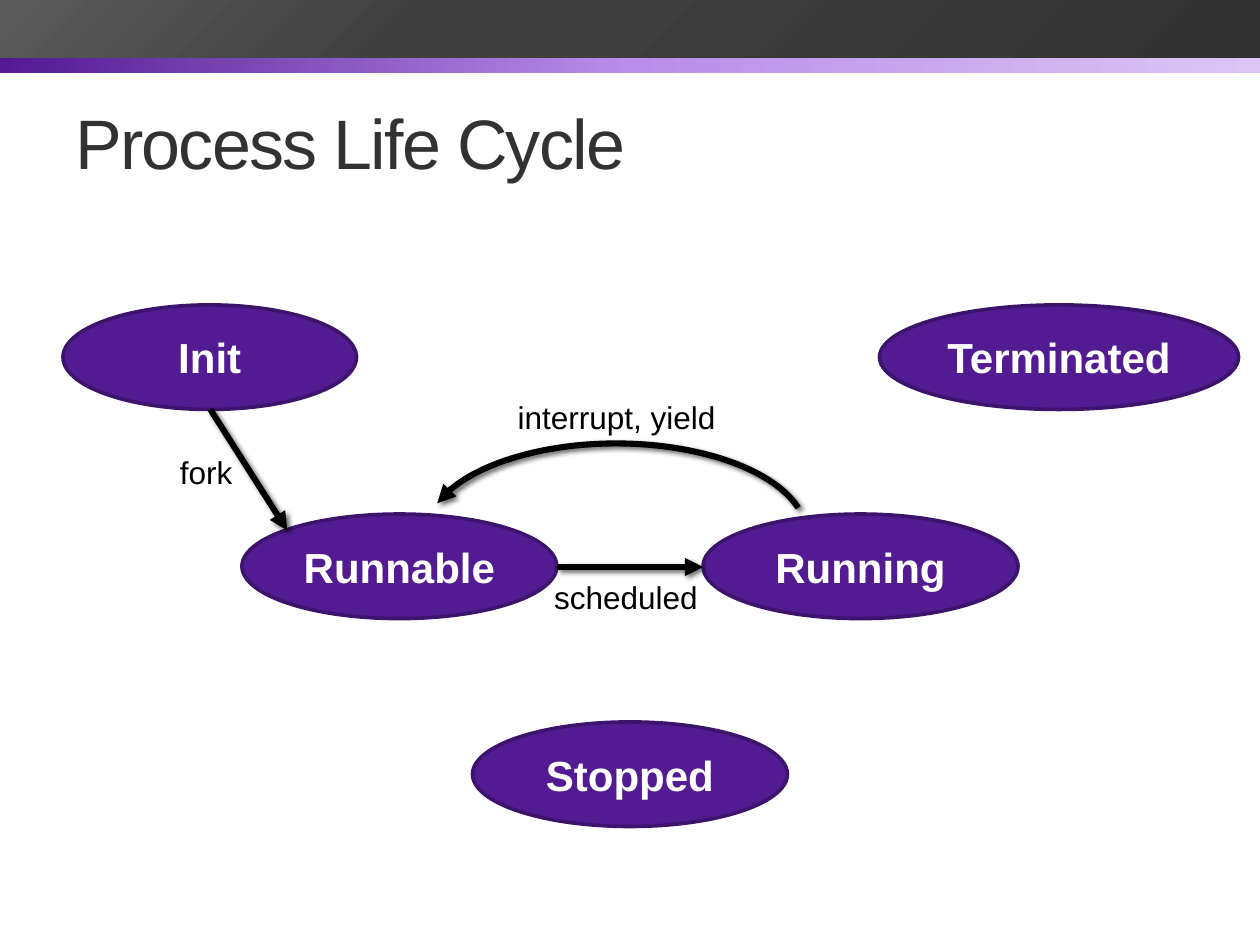
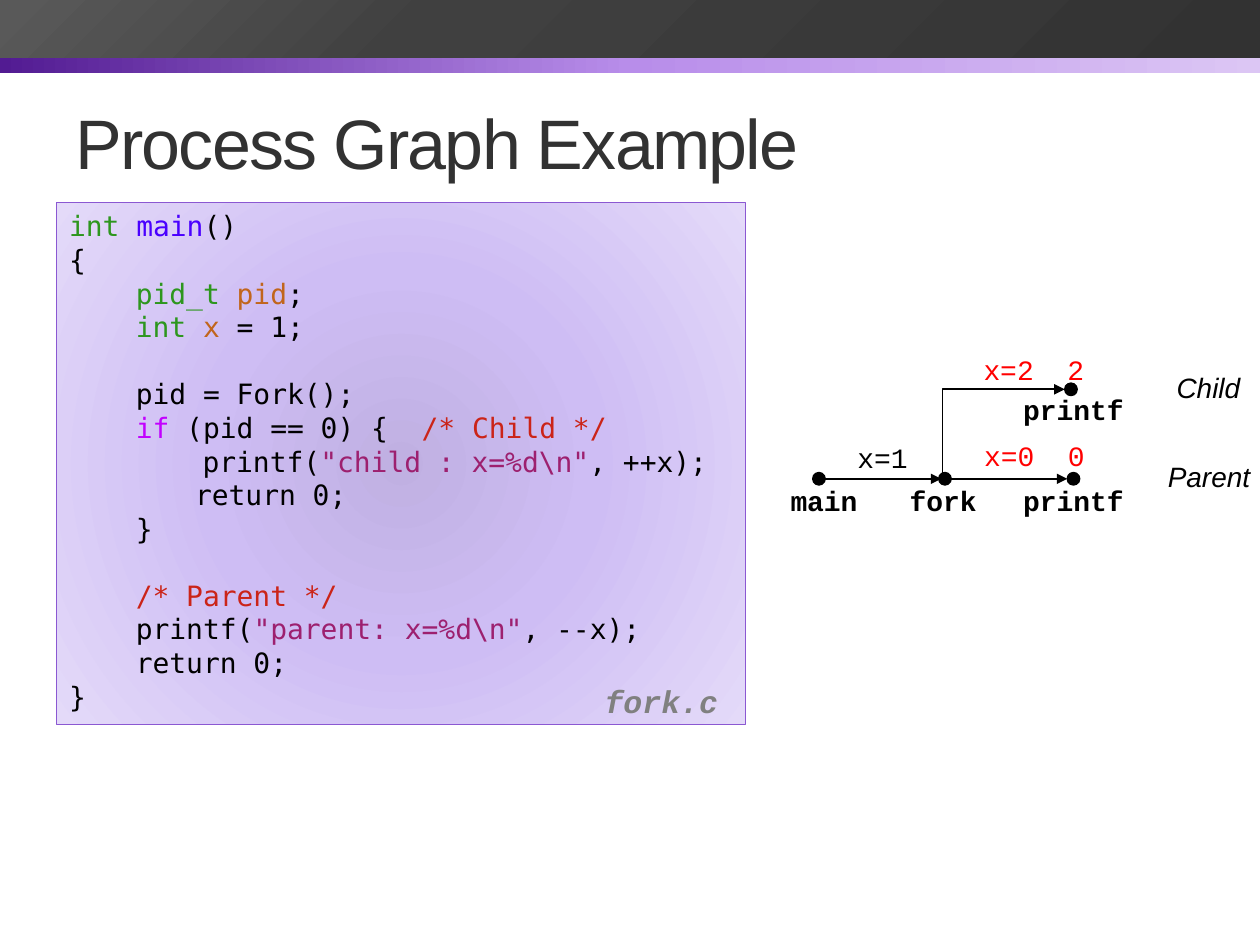
from pptx import Presentation
from pptx.dml.color import RGBColor
from pptx.enum.shapes import MSO_CONNECTOR, MSO_SHAPE
from pptx.enum.text import MSO_ANCHOR, PP_ALIGN
from pptx.oxml import parse_xml
from pptx.oxml.ns import nsdecls, qn
from pptx.util import Inches, Pt

RECTANGLE, OVAL, ARC = MSO_SHAPE.RECTANGLE, MSO_SHAPE.OVAL, MSO_SHAPE.ARC
STRAIGHT, ELBOW = MSO_CONNECTOR.STRAIGHT, MSO_CONNECTOR.ELBOW
LEFT, CENTER = PP_ALIGN.LEFT, PP_ALIGN.CENTER
TOP, MIDDLE = MSO_ANCHOR.TOP, MSO_ANCHOR.MIDDLE
SANS, COURIER, MONO = "Arial", "Courier New", "DejaVu Sans Mono"

COLORS = {
    "purple": "521B92", "purple edge": "3D146C", "title": "323232",
    "white": "FFFFFF", "black": "000000", "red": "FF0000", "gray": "808080",
    "code edge": "8B58D2", "type": "2D961E", "function": "4A00FF",
    "variable": "C1651C", "keyword": "C200FF", "comment": "CB2418",
    "string": "9D206F",
}
PURPLE_BAND = [(0, "521B92"), (50, "B88DEA"), (100, "DCC6F4")]
DARK_BAND = [(0, "323232"), (66, "404040"), (99, "595959")]
CODE_FILL = [(0, "C0B0E2"), (45, "CEBDF4"), (100, "E4DAF9")]
LINEAR = '<a:lin ang="{}" scaled="0"/>'
RADIAL = ('<a:path path="circle"><a:fillToRect l="50000" t="50000" '
          'r="50000" b="50000"/></a:path>')
SHADOW = ('<a:outerShdw blurRad="38100" dist="25400" dir="2700000">'
          '<a:srgbClr val="000000"><a:alpha val="60000"/></a:srgbClr>'
          '</a:outerShdw>')
CODE_INDENT = 0.53
CODE_LEADING = Pt(19.2)


def color(name):
    return RGBColor.from_string(COLORS[name])


class SlideBuilder:
    """Holds the shared style and the slide being built."""

    def __init__(self, deck):
        self.deck = deck
        self.page = None

    def new_page(self, title):
        self.page = self.deck.slides.add_slide(self.deck.slide_layouts[6])
        self.gradient(self.shape(RECTANGLE, 0, 0.24, 10, 0.34),
                      PURPLE_BAND, LINEAR.format(0))
        self.gradient(self.shape(RECTANGLE, 0, 0, 10, 0.46),
                      DARK_BAND, LINEAR.format(225 * 60000))
        span = self.label(title, 0.5, 0.58, 9, 1.08, size=40, ink="title",
                          align=LEFT, anchor=MIDDLE, wrap=True)
        span._r.get_or_add_rPr().set("spc", "-100")

    def shape(self, kind, left, top, width, height, fill=None, edge=None,
              weight=0.75):
        box = self.page.shapes.add_shape(kind, Inches(left), Inches(top),
                                         Inches(width), Inches(height))
        box.shadow.inherit = False
        if fill:
            box.fill.solid()
            box.fill.fore_color.rgb = color(fill)
        else:
            box.fill.background()
        if edge:
            box.line.color.rgb = color(edge)
            box.line.width = Pt(weight)
        else:
            box.line.fill.background()
        return box

    def gradient(self, box, stops, direction):
        marks = "".join(f'<a:gs pos="{place * 1000}"><a:srgbClr val="{tint}"/></a:gs>'
                        for place, tint in stops)
        flat = box._element.spPr.find(qn("a:noFill"))
        flat.getparent().replace(flat, parse_xml(
            f'<a:gradFill {nsdecls("a")} rotWithShape="1">'
            f'<a:gsLst>{marks}</a:gsLst>{direction}</a:gradFill>'))

    def span(self, para, text, size, ink="black", font=SANS, bold=False,
             italic=False):
        span = para.add_run()
        span.text = text
        span.font.size = Pt(size)
        span.font.name = font
        span.font.bold = bold
        span.font.italic = italic
        span.font.color.rgb = color(ink)
        return span

    def label(self, text, left, top, width, height=0.37, size=16,
              align=CENTER, anchor=TOP, wrap=False, **style):
        box = self.page.shapes.add_textbox(Inches(left), Inches(top),
                                           Inches(width), Inches(height))
        frame = box.text_frame
        frame.word_wrap = wrap
        frame.vertical_anchor = anchor
        para = frame.paragraphs[0]
        para.alignment = align
        return self.span(para, text, size, **style)

    def state(self, name, left, top, width):
        box = self.shape(OVAL, left, top, width, 0.83, "purple",
                         "purple edge", 2.08)
        frame = box.text_frame
        frame.word_wrap = False
        frame.vertical_anchor = MIDDLE
        para = frame.paragraphs[0]
        para.alignment = CENTER
        self.span(para, name, 24, "white", bold=True)

    def dot(self, center_x, center_y):
        self.shape(OVAL, center_x - 0.05, center_y - 0.05, 0.1, 0.1,
                   "black", "black")

    def arrowhead(self, stroke, end="tailEnd"):
        stroke.line._get_or_add_ln().append(
            parse_xml(f'<a:{end} {nsdecls("a")} type="triangle"/>'))

    def effects(self, stroke, content):
        properties = stroke._element.spPr
        for old in properties.findall(qn("a:effectLst")):
            properties.remove(old)
        properties.append(parse_xml(
            f'<a:effectLst {nsdecls("a")}>{content}</a:effectLst>'))

    def arrow(self, start, end, weight=1, shadow="", kind=STRAIGHT):
        line = self.page.shapes.add_connector(
            kind, *(Inches(value) for value in (*start, *end)))
        line.line.color.rgb = color("black")
        line.line.width = Pt(weight)
        self.arrowhead(line)
        self.effects(line, shadow)
        return line

    def corner_arrow(self, start, end):
        """Arrow that rises from start, then runs right to end."""
        across, rise = end[0] - start[0], start[1] - end[1]
        middle_x, middle_y = start[0] + across / 2, end[1] + rise / 2
        line = self.arrow((middle_x - rise / 2, middle_y - across / 2),
                          (middle_x + rise / 2, middle_y + across / 2),
                          kind=ELBOW)
        properties = line._element.spPr
        properties.find(qn("a:prstGeom")).set("prst", "bentConnector2")
        frame = properties.find(qn("a:xfrm"))
        for key, value in (("rot", "5400000"), ("flipH", "1"), ("flipV", "1")):
            frame.set(key, value)

    def arc_arrow(self, left, top, width, height, start, end):
        arc = self.shape(ARC, left, top, width, height, edge="black", weight=3.5)
        for index, degrees in enumerate((start, end)):
            arc.adjustments[index] = degrees * 0.6
        self.arrowhead(arc, "headEnd")
        self.effects(arc, SHADOW)

    def code(self, lines, left, top, width, height):
        box = self.shape(RECTANGLE, left, top, width, height, edge="code edge")
        self.gradient(box, CODE_FILL, RADIAL)
        frame = box.text_frame
        frame.word_wrap = False
        frame.vertical_anchor = TOP
        for number, (indent, gap, *spans) in enumerate(lines):
            para = frame.add_paragraph() if number else frame.paragraphs[0]
            para.alignment = LEFT
            para.line_spacing = CODE_LEADING
            para.space_before = CODE_LEADING * gap
            para._p.get_or_add_pPr().set("marL", str(Inches(indent)))
            for text, ink in spans:
                self.span(para, text, 16, ink, MONO)


def life_cycle(builder):
    builder.new_page("Process Life Cycle")
    # States
    for state in (("Init", 0.5, 2.42, 2.33), ("Runnable", 1.92, 4.08, 2.5),
                  ("Running", 5.58, 4.08, 2.5), ("Terminated", 6.98, 2.42, 2.85),
                  ("Stopped", 3.75, 5.73, 2.5)):
        builder.state(*state)
    # Transitions
    builder.arrow((1.67, 3.25), (2.28, 4.21), 3.5, SHADOW)
    builder.arrow((4.42, 4.5), (5.58, 4.5), 3.5, SHADOW)
    builder.arc_arrow(3.38, 3.52, 3.02, 1.44, 189.81, 351.77)
    for text, left, top, width in (("fork", 1.33, 3.55, 0.62),
                                   ("scheduled", 4.3, 4.54, 1.35),
                                   ("interrupt, yield", 4.01, 3.11, 1.79)):
        builder.label(text, left, top, width, 0.4, size=18, align=LEFT)


# Each code line: indent, blank lines above, then its coloured spans
STEP = CODE_INDENT
FORK_CODE = [
    (0, 0, ("int ", "type"), ("main", "function"), ("()", "black")),
    (0, 0, ("{", "black")),
    (STEP, 0, ("pid_t ", "type"), ("pid", "variable"), (";", "black")),
    (STEP, 0, ("int ", "type"), ("x", "variable"), (" = 1;", "black")),
    (STEP, 1, ("pid = Fork();", "black")),
    (STEP, 0, ("if", "keyword"), (" (pid == 0) {  ", "black"),
     ("/* Child */", "comment")),
    (2 * STEP, 0, ("printf(", "black"), ('"child : x=%d\\n"', "string"),
     (", ++x);", "black")),
    (1, 0, ("return 0;", "black")),
    (STEP, 0, ("}", "black")),
    (STEP, 1, ("/* Parent */", "comment")),
    (STEP, 0, ("printf(", "black"), ('"parent: x=%d\\n"', "string"),
     (", --x);", "black")),
    (STEP, 0, ("return 0;", "black")),
    (0, 0, ("}", "black")),
]


def process_graph(builder):
    builder.new_page("Process Graph Example")
    # Code listing
    builder.code(FORK_CODE, 0.45, 1.61, 5.47, 4.14)
    builder.label("fork.c", 4.7, 5.36, 1.17, 0.39, size=18, align=LEFT,
                  ink="gray", font=COURIER, bold=True, italic=True)
    # Events and arrows
    parent_y, child_y = 3.8, 3.09
    for center_x, center_y in ((6.5, parent_y), (7.5, parent_y),
                               (8.52, parent_y), (8.5, child_y)):
        builder.dot(center_x, center_y)
    builder.arrow((6.55, parent_y), (7.47, parent_y))
    builder.arrow((7.55, parent_y), (8.47, parent_y))
    builder.corner_arrow((7.48, parent_y), (8.45, child_y))
    # Event names
    for name, left, top, width in (("main", 6.17, 3.79, 0.74),
                                   ("fork", 7.1, 3.79, 0.77),
                                   ("printf", 8, 3.79, 1.04),
                                   ("printf", 8, 3.07, 1.04)):
        builder.label(name, left, top, width, font=COURIER, bold=True)
    # Values and output
    for text, left, top, width, ink in (("x=1", 6.57, 3.45, 0.87, "black"),
                                        ("x=2  2", 7.5, 2.75, 1.41, "red"),
                                        ("x=0  0", 7.49, 3.43, 1.44, "red")):
        builder.label(text, left, top, width, font=COURIER, ink=ink)
    # Process names
    builder.label("Parent", 9.17, 3.6, 0.92, align=LEFT, italic=True)
    builder.label("Child", 9.24, 2.89, 0.77, align=LEFT, italic=True)


def main():
    deck = Presentation()
    deck.slide_width, deck.slide_height = Inches(10), Inches(7.5)
    builder = SlideBuilder(deck)
    life_cycle(builder)
    process_graph(builder)
    deck.save("out.pptx")


if __name__ == "__main__":
    main()
